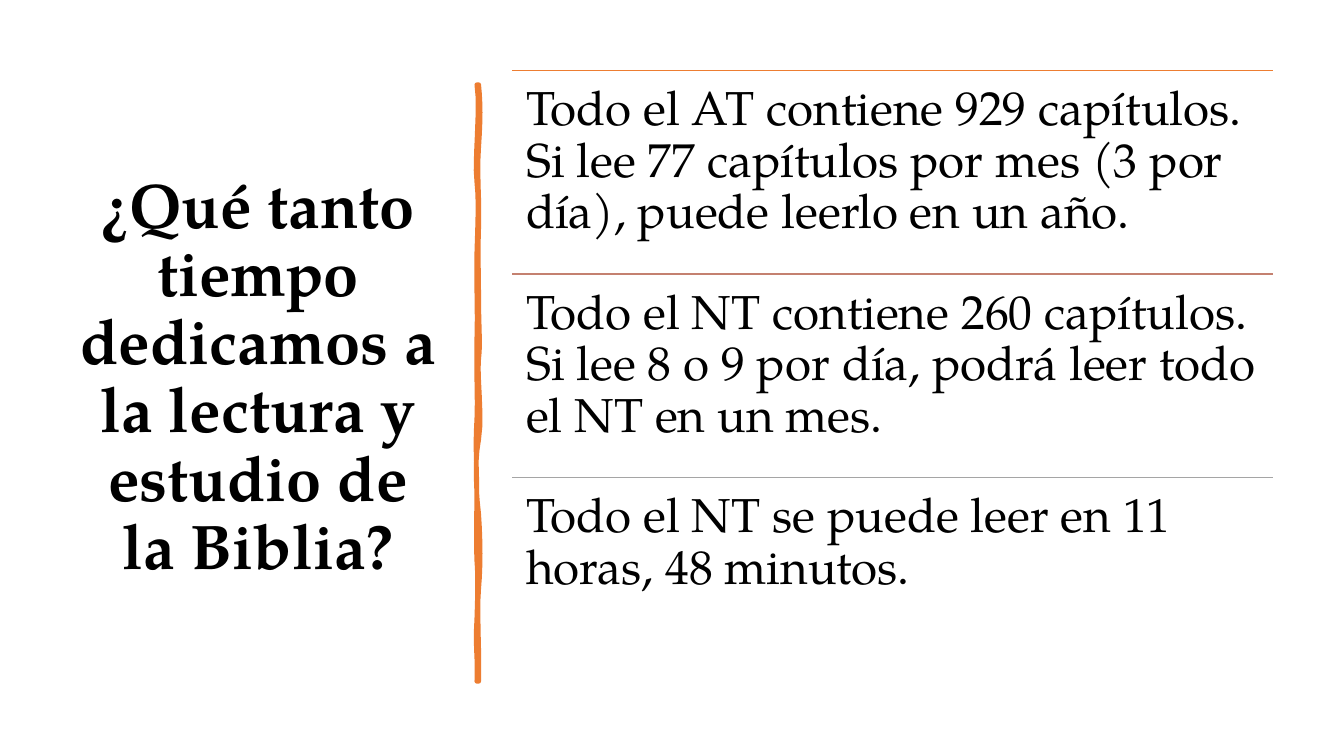
from dataclasses import dataclass

from lxml.etree import SubElement
from pptx import Presentation
from pptx.dml.color import RGBColor
from pptx.enum.shapes import MSO_CONNECTOR as Connector
from pptx.enum.text import MSO_ANCHOR as Anchor, PP_ALIGN as Align
from pptx.oxml.ns import qn
from pptx.util import Pt


@dataclass(frozen=True)
class Theme:
    font: str = "TeX Gyre Pagella"
    ink: str = "000000"
    accent: str = "ED7D31"
    title_size: float = 45
    fact_size: float = 34
    line_spacing: float = 0.9
    rule_width: float = 1
    brush_width: float = 3.25


THEME = Theme()

TITLE = "¿Qué tanto tiempo dedicamos a la lectura y estudio de la Biblia?"
# Each fact has the colour of the rule above it
FACTS = [
    ("ED7D31", "Todo el AT contiene 929 capítulos. Si lee 77 capítulos por mes "
               "(3 por día), puede leerlo en un año."),
    ("C48170", "Todo el NT contiene 260 capítulos. Si lee 8 o 9 por día, "
               "podrá leer todo el NT en un mes."),
    ("A5A5A5", "Todo el NT se puede leer en 11 horas, 48 minutos."),
]
FACT_LEFT, FACT_TOP, FACT_WIDTH, FACT_HEIGHT = 365.8, 50.4, 543.6, 145.44

# Brush stroke edges; each curve is (bend, y, bend, y, end y)
BRUSH_TOP, BRUSH_BOTTOM = 60.5, 486.7
RIGHT_X, LEFT_X = 342, 340.6
RIGHT_EDGE = [
    (1.4, 73.4, 1.4, 85.7, 105.1),
    (-1.4, 124.6, 0.7, 140.4, 162.7),
    (-0.7, 185, 0, 188.6, 211.7),
    (0, 234, 1.4, 246.2, 256.3),
    (-1.4, 266.4, 2.9, 298.1, 313.9),
    (-2.9, 329, -2.2, 348.5, 367.2),
    (1.4, 385.9, 1.4, 406.1, 420.5),
    (-1.4, 434.2, 0.7, 468, BRUSH_BOTTOM),
]
LEFT_EDGE = [
    (0.7, 465.1, -1.4, 463.7, 441.4),
    (0.7, 419.8, 0.7, 410.4, 401),
    (-0.7, 391.7, 0, 356.4, 343.4),
    (0, 330.5, -1.4, 320.4, 298.8),
    (0.7, 277.9, -0.7, 268.6, 241.2),
    (0.7, 214.6, -0.7, 202.3, 180),
    (0.7, 157, 1.4, 144, 130.3),
    (-2.2, 117.4, 2.9, 74.9, BRUSH_TOP),
]


def color(code):
    return RGBColor.from_string(code)


def add_text(page, frame, text, size, bold=False, align=Align.LEFT,
             anchor=Anchor.TOP, inset=10):
    box = page.shapes.add_textbox(*map(Pt, frame))
    body = box.text_frame
    body.word_wrap = True
    body.vertical_anchor = anchor
    body.margin_left = body.margin_right = Pt(inset)
    body.margin_top = body.margin_bottom = Pt(inset)
    body.text = text
    para = body.paragraphs[0]
    para.alignment = align
    para.line_spacing = THEME.line_spacing
    font = para.runs[0].font
    font.name, font.size, font.bold = THEME.font, Pt(size), bold
    font.color.rgb = color(THEME.ink)


def add_rule(page, left, top, width, code):
    rule = page.shapes.add_connector(
        Connector.STRAIGHT, Pt(left), Pt(top), Pt(left + width), Pt(top))
    rule.line.color.rgb = color(code)
    rule.line.width = Pt(THEME.rule_width)
    SubElement(rule._element.spPr, qn("a:effectLst"))


def trace_edge(x, start, curves, steps=6):
    """Sample the cubic curves that run along one side of the stroke."""
    points = []
    for bend1, y1, bend2, y2, end in curves:
        for step in range(1, steps + 1):
            t = step / steps
            u = 1 - t
            near, far = 3 * u * u * t, 3 * u * t * t
            points.append((Pt(x + near * bend1 + far * bend2),
                           Pt(u**3 * start + near * y1 + far * y2 + t**3 * end)))
        start = end
    return points


def add_brush_stroke(page):
    builder = page.shapes.build_freeform(Pt(RIGHT_X), Pt(BRUSH_TOP))
    builder.add_line_segments(
        trace_edge(RIGHT_X, BRUSH_TOP, RIGHT_EDGE)
        + [(Pt(LEFT_X), Pt(BRUSH_BOTTOM))]
        + trace_edge(LEFT_X, BRUSH_BOTTOM, LEFT_EDGE), close=True)
    stroke = builder.convert_to_shape()
    stroke.shadow.inherit = False
    stroke.fill.solid()
    stroke.fill.fore_color.rgb = color(THEME.accent)
    stroke.line.color.rgb = color(THEME.accent)
    stroke.line.width = Pt(THEME.brush_width)
    SubElement(stroke.line._get_or_add_ln(), qn("a:round"))


def main():
    deck = Presentation()
    deck.slide_width, deck.slide_height = Pt(960), Pt(540)
    page = deck.slides.add_slide(deck.slide_layouts[6])

    # Question and divider
    add_text(page, (49.7, 50.4, 269.3, 439.9), TITLE, THEME.title_size,
             bold=True, align=Align.CENTER, anchor=Anchor.MIDDLE, inset=7)
    add_brush_stroke(page)

    # Reading facts, each under its rule
    for index, (code, fact) in enumerate(FACTS):
        top = FACT_TOP + index * FACT_HEIGHT
        add_rule(page, FACT_LEFT, top, FACT_WIDTH, code)
        add_text(page, (FACT_LEFT, top, FACT_WIDTH, FACT_HEIGHT), fact,
                 THEME.fact_size)

    deck.save("out.pptx")


if __name__ == "__main__":
    main()
